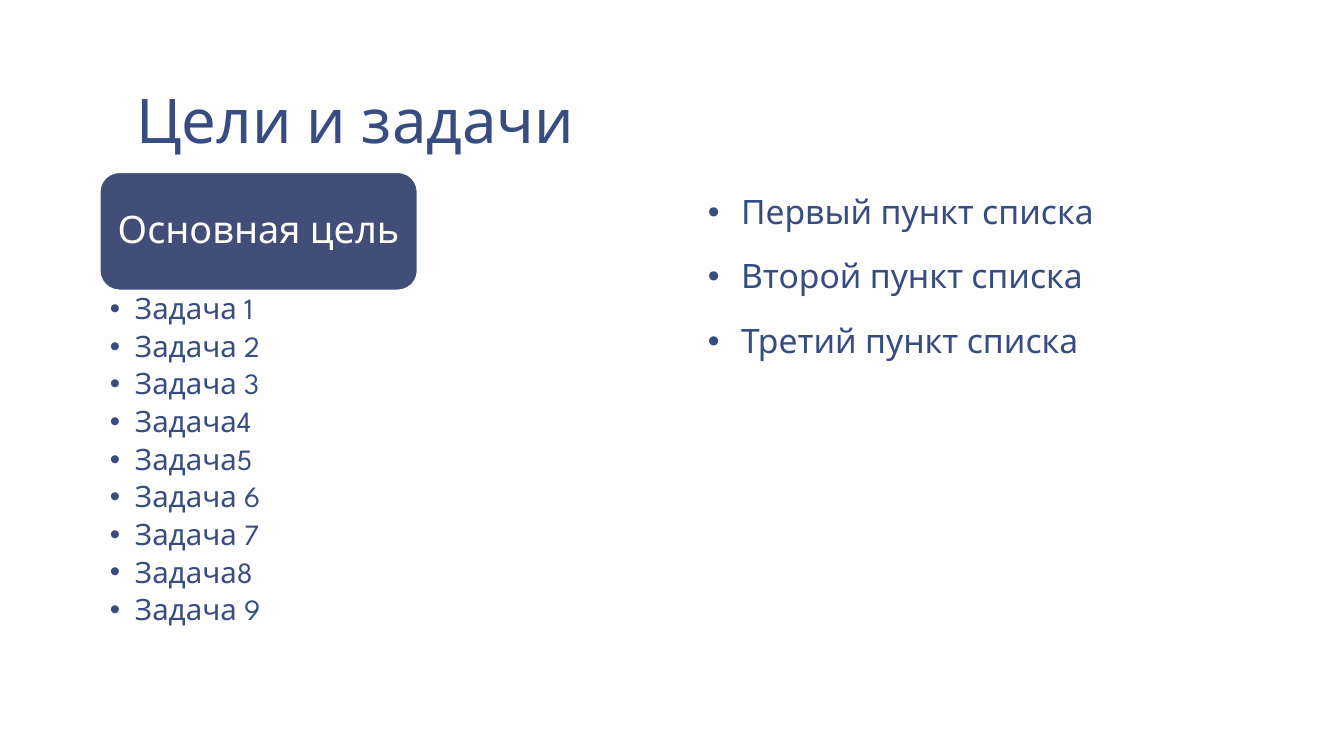
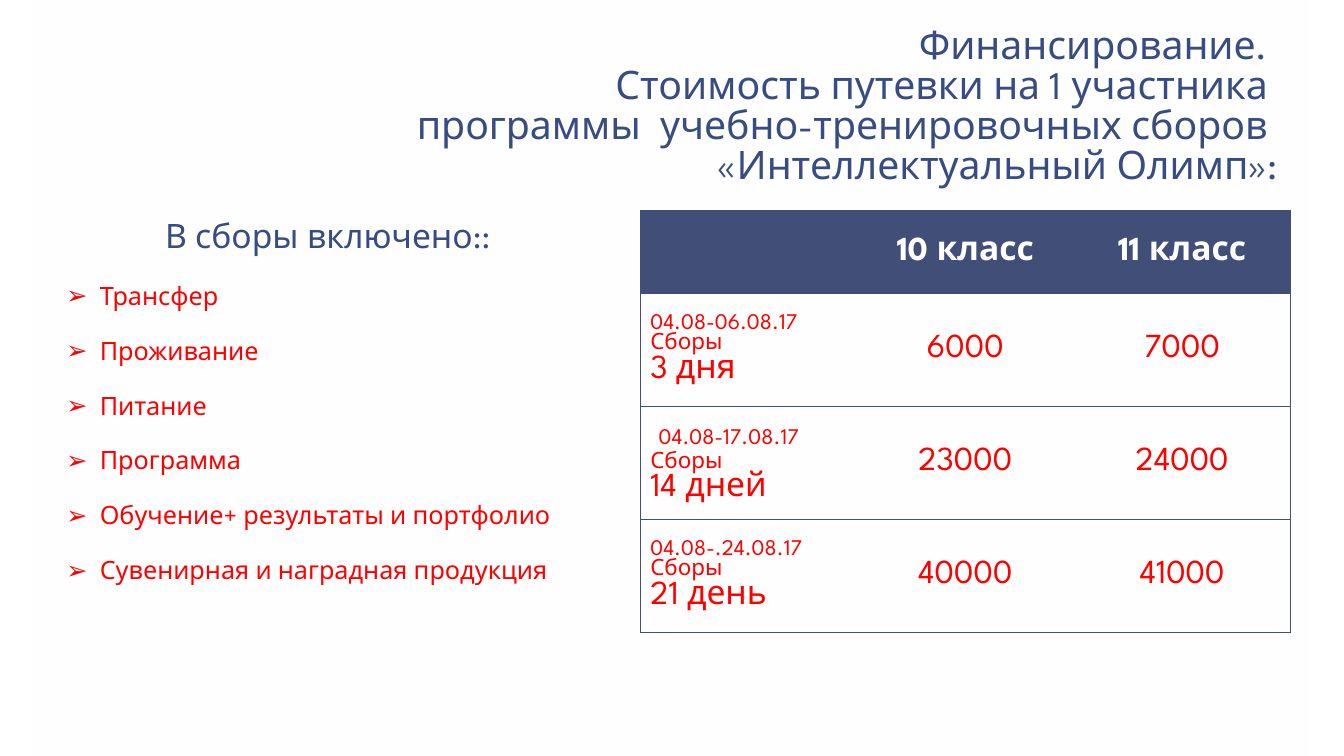
from lxml.etree import SubElement
from pptx import Presentation
from pptx.dml.color import RGBColor
from pptx.enum.shapes import MSO_SHAPE
from pptx.enum.text import MSO_ANCHOR, MSO_AUTO_SIZE, PP_ALIGN
from pptx.oxml.ns import qn
from pptx.util import Inches, Pt

FONT = "League Spartan"
COLORS = {"title": "374C81", "navy": "414E77", "red": "FF0000", "white": "FFFFFF"}
LIST_GAP = 18.7


def write(frame, lines, size=24, color="title", bold=False, align=PP_ALIGN.LEFT,
          spacing=None, before=0, after=0, bullet=None, indent=0.33, append=False):
    """Write one paragraph per line; a line is a string or a list of (text, size) runs."""
    for index, line in enumerate(lines):
        first = index == 0 and not append
        paragraph = frame.paragraphs[0] if first else frame.add_paragraph()
        paragraph.alignment = align
        if spacing:
            paragraph.line_spacing = spacing
        paragraph.space_before = Pt(0 if first else before)
        paragraph.space_after = Pt(after)
        if bullet:
            properties = paragraph._p.get_or_add_pPr()
            properties.set("marL", str(Inches(indent)))
            properties.set("indent", str(-Inches(indent)))
            SubElement(properties, qn("a:buFont"), typeface="Arial")
            SubElement(properties, qn("a:buChar"), char=bullet)
        for text, run_size in [(line, size)] if isinstance(line, str) else line:
            run = paragraph.add_run()
            run.text = text
            run.font.name = FONT
            run.font.size = Pt(run_size)
            run.font.bold = bold
            run.font.color.rgb = RGBColor.from_string(COLORS[color])


def set_frame(frame, anchor=MSO_ANCHOR.TOP, margins=(0.13, 0.07, 0.13, 0.07)):
    """Fix wrapping, anchor and margins, and return the frame."""
    frame.word_wrap = True
    frame.auto_size = MSO_AUTO_SIZE.NONE
    frame.vertical_anchor = anchor
    (frame.margin_left, frame.margin_top,
     frame.margin_right, frame.margin_bottom) = map(Inches, margins)
    return frame


deck = Presentation()
deck.slide_width, deck.slide_height = Inches(13.33), Inches(7.5)

title_specs = [
    ((1.22, 0.09, 11.11, 1.53), ["Цели и задачи"], 44, PP_ALIGN.LEFT),
    ((1.23, 0.68, 11.57, 1.25),
     ["Финансирование. ",
      "Стоимость путевки на 1 участника ",
      "программы  учебно-тренировочных сборов ",
      "«Интеллектуальный Олимп»:"], 28, PP_ALIGN.RIGHT),
]
for box, lines, size, align in title_specs:
    slide = deck.slides.add_slide(deck.slide_layouts[5])
    title = slide.shapes.title
    title.left, title.top, title.width, title.height = map(Inches, box)
    write(set_frame(title.text_frame, MSO_ANCHOR.BOTTOM), lines,
          size=size, align=align, spacing=0.85)
goals, funding = deck.slides

# The translucent panel belongs to the master, behind its placeholders
panel = goals.shapes.add_shape(
    MSO_SHAPE.RECTANGLE, Inches(0.33), 0, Inches(12.66), Inches(7.5))
panel.shadow.inherit = False
panel.line.fill.background()
panel.fill.gradient()
panel.fill.gradient_angle = 230
for stop in panel.fill.gradient_stops:
    stop.color.rgb = RGBColor.from_string(COLORS["white"])
last_color = list(panel._element.iter(qn("a:srgbClr")))[-1]
SubElement(last_color, qn("a:alpha"), val="45000")
deck.slide_master.shapes._spTree.insert(2, panel._element)

# Goals and tasks
main_goal = goals.shapes.add_shape(
    MSO_SHAPE.ROUNDED_RECTANGLE, Inches(0.99), Inches(1.71), Inches(3.15), Inches(1.17))
main_goal.shadow.inherit = False
main_goal.fill.solid()
main_goal.fill.fore_color.rgb = RGBColor.from_string(COLORS["navy"])
main_goal.line.color.rgb = RGBColor.from_string(COLORS["white"])
main_goal.line.width = Pt(1)
write(set_frame(main_goal.text_frame, MSO_ANCHOR.MIDDLE, (0.11,) * 4),
      ["Основная цель"], size=27, color="white", align=PP_ALIGN.CENTER, spacing=0.9)

tasks = goals.shapes.add_textbox(Inches(0.99), Inches(2.88), Inches(3.15), Inches(3.55))
write(set_frame(tasks.text_frame, margins=(0.1, 0.04, 0.21, 0.04)),
      ["Задача 1", "Задача 2", "Задача 3", "Задача4", "Задача5",
       "Задача 6", "Задача 7", "Задача8", "Задача 9"],
      size=21, spacing=0.9, after=4.2, bullet="•", indent=0.25)

points = goals.shapes.add_textbox(Inches(6.89), Inches(1.85), Inches(5.44), Inches(4.89))
write(set_frame(points.text_frame),
      [f"{ordinal} пункт списка" for ordinal in ("Первый", "Второй", "Третий")],
      spacing=0.95, before=LIST_GAP, bullet="•")

# Funding
included = funding.shapes.add_textbox(Inches(0.53), Inches(2.09), Inches(5.44), Inches(4.17))
included_frame = set_frame(included.text_frame)
write(included_frame, ["В сборы включено::"], align=PP_ALIGN.CENTER, spacing=0.95)
write(included_frame,
      ["Трансфер", "Проживание", "Питание", "Программа",
       "Обучение+ результаты и портфолио", "Сувенирная и наградная продукция"],
      size=18, color="red", spacing=0.95, before=LIST_GAP, bullet="➢", append=True)

price_rows = [
    ([], "10 класс", "11 класс"),
    ([[("04.08-06.08.17", 16)], [("Сборы", 16)], "3 дня"], "6000", "7000"),
    ([[(" ", 24), ("04.08-17.08.17", 16)], [("Сборы", 16)], "14 дней"], "23000", "24000"),
    ([[("04.08-.24.08.17", 16)], [("Сборы", 16)], "21 день"], "40000", "41000"),
]
prices = funding.shapes.add_table(
    4, 3, Inches(6.35), Inches(2.09), Inches(6.45), Inches(4.18)).table
prices.horz_banding = False
for column in prices.columns:
    column.width = Inches(2.15)
for row_index, values in enumerate(price_rows):
    header = row_index == 0
    prices.rows[row_index].height = Inches(0.82 if header else 1.12)
    for column_index, value in enumerate(values):
        cell = prices.cell(row_index, column_index)
        cell.vertical_anchor = MSO_ANCHOR.MIDDLE
        label = column_index == 0
        write(cell.text_frame, value if label else [value],
              color="white" if header else "red", bold=header,
              align=PP_ALIGN.LEFT if label else PP_ALIGN.CENTER)
        borders = {"a:lnL": label, "a:lnR": column_index == 2,
                   "a:lnT": True, "a:lnB": True}
        for tag, visible in borders.items():
            border = SubElement(cell._tc.get_or_add_tcPr(), qn(tag), w=str(Pt(0.5)))
            if visible:
                stroke = SubElement(border, qn("a:solidFill"))
                SubElement(stroke, qn("a:srgbClr"), val=COLORS["navy"])
            else:
                SubElement(border, qn("a:noFill"))
        if header:
            cell.fill.solid()
            cell.fill.fore_color.rgb = RGBColor.from_string(COLORS["navy"])
        else:
            cell.fill.background()

deck.save("out.pptx")
